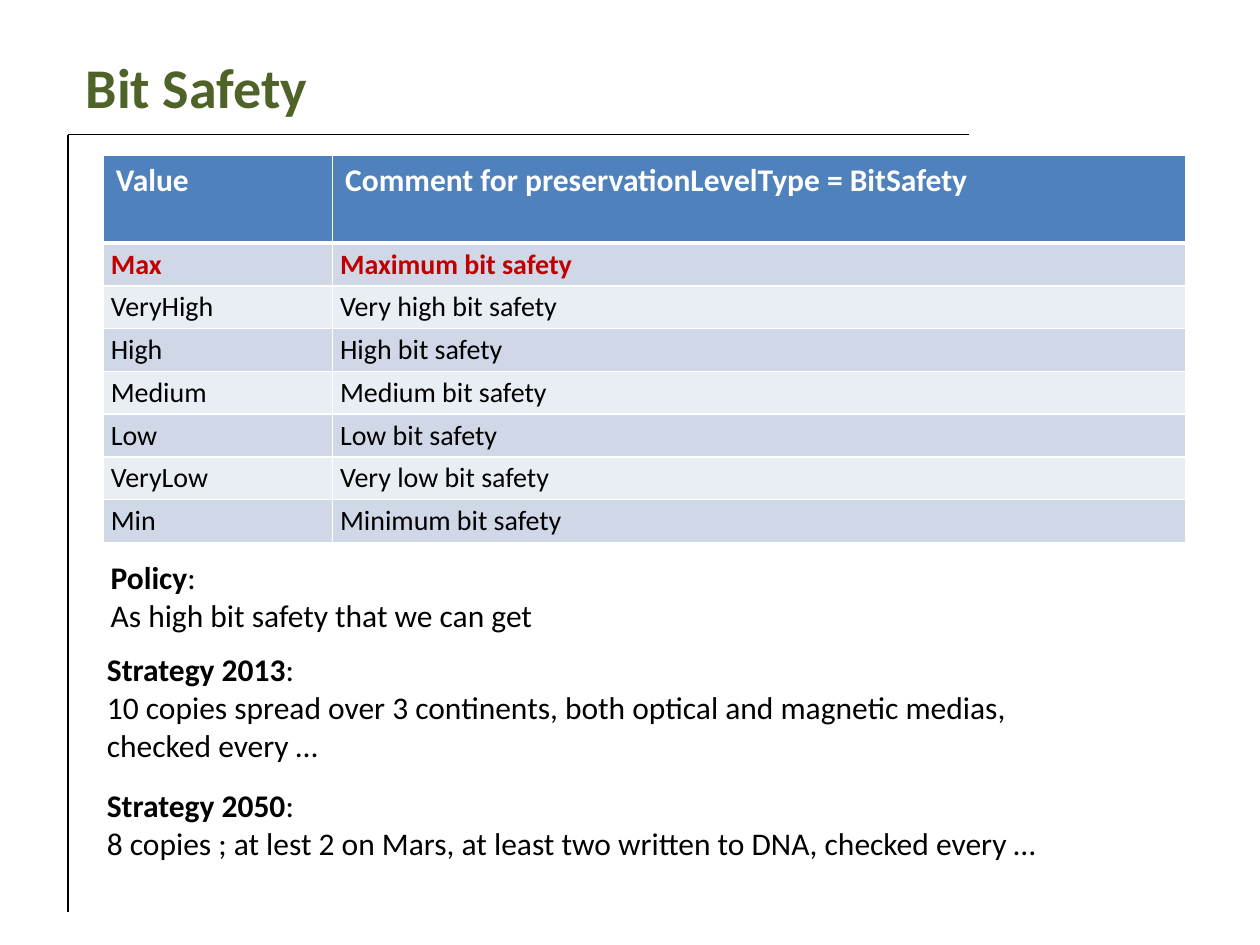
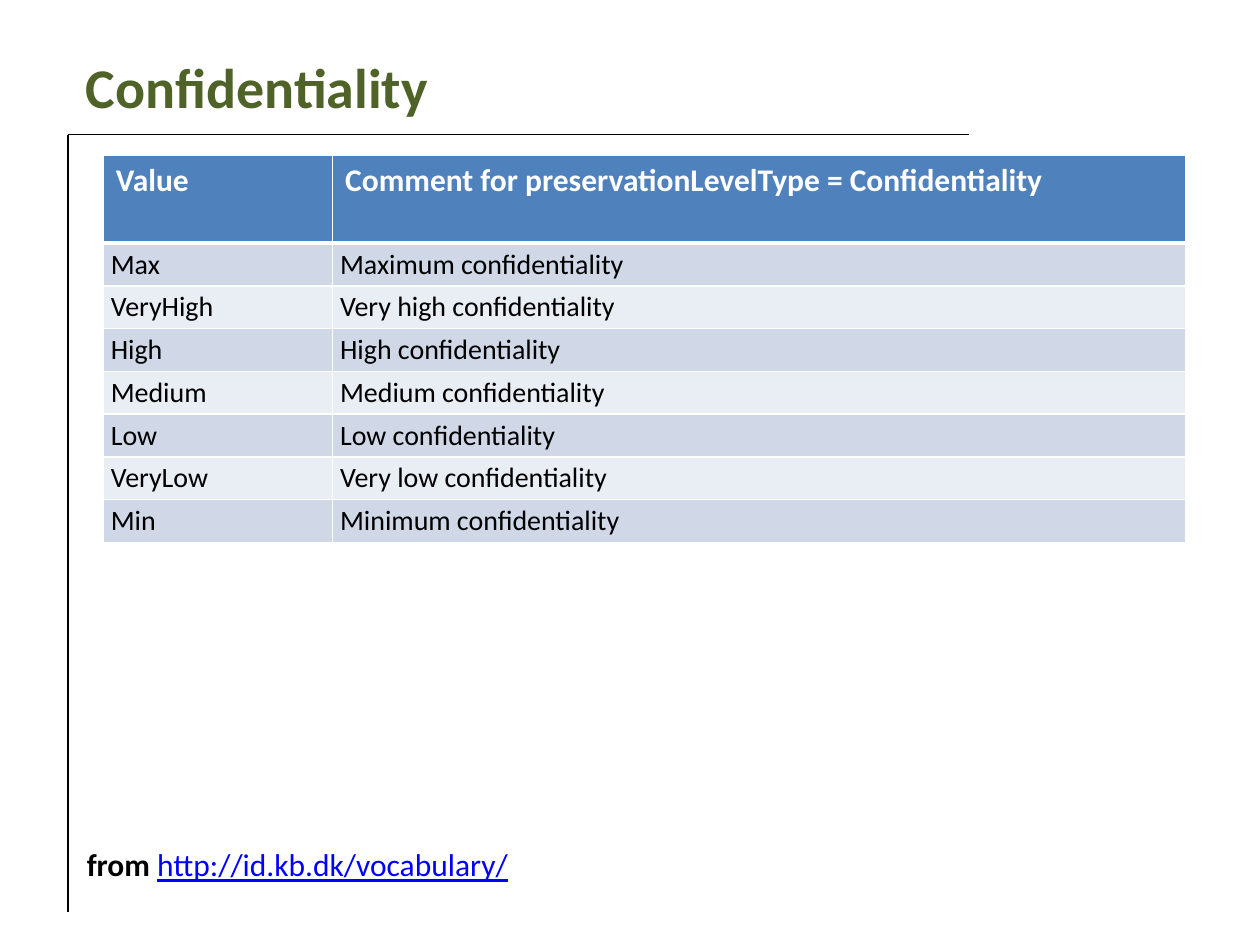
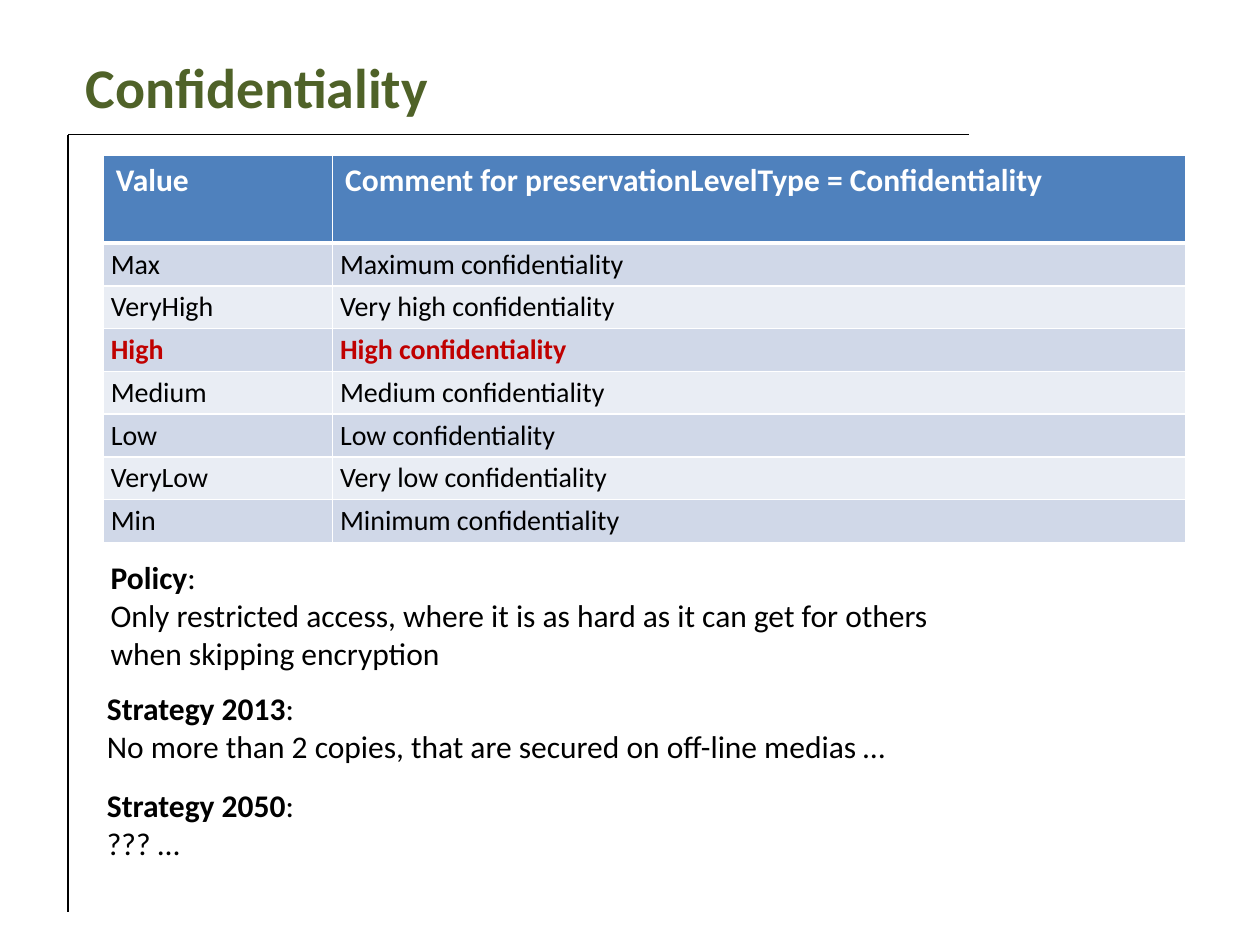
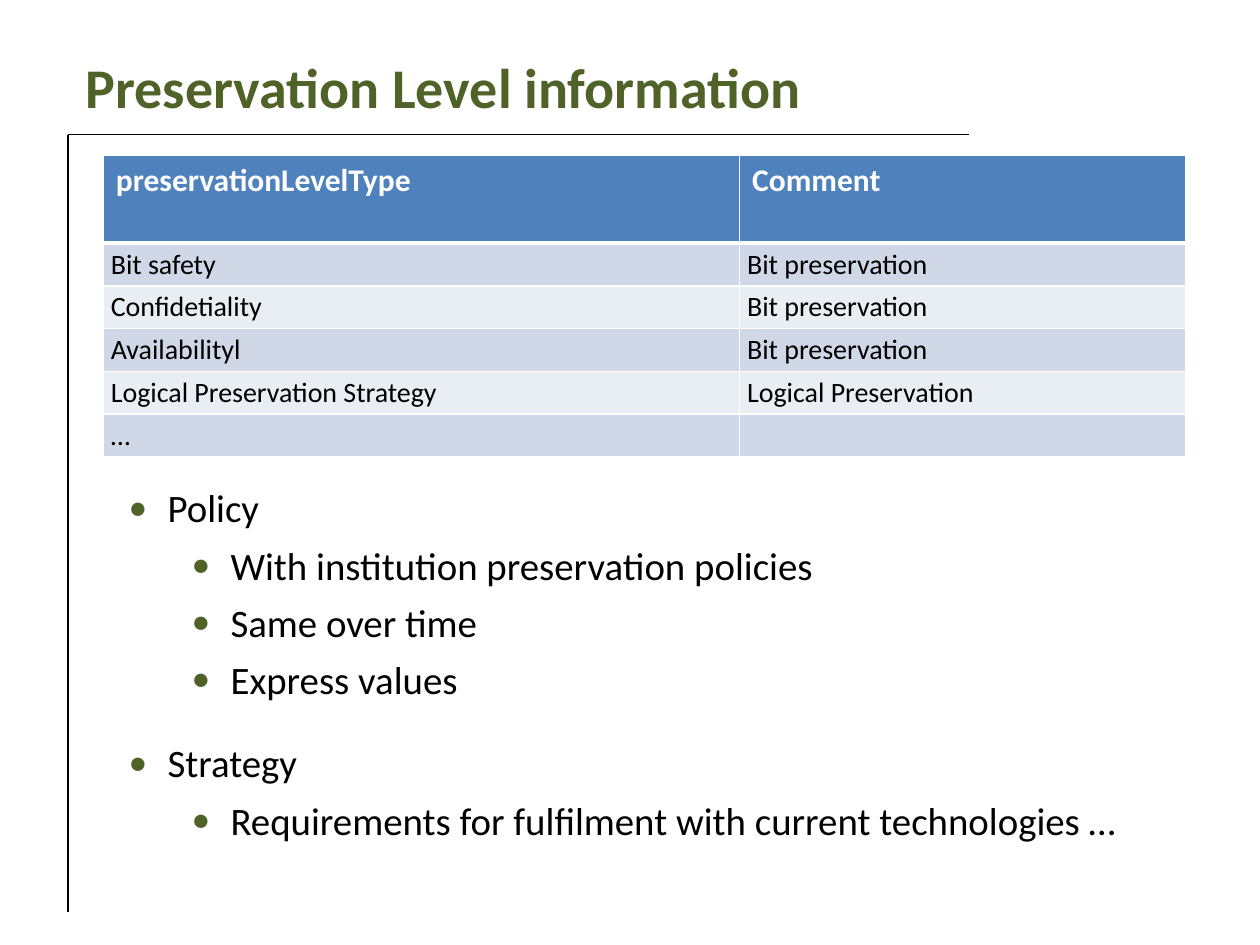
from dataclasses import dataclass
from typing import NamedTuple

from lxml import etree
from pptx import Presentation
from pptx.dml.color import RGBColor
from pptx.enum.shapes import MSO_CONNECTOR
from pptx.enum.text import MSO_ANCHOR, MSO_AUTO_SIZE, PP_ALIGN
from pptx.oxml.ns import qn
from pptx.util import Inches, Pt

LEFT = PP_ALIGN.LEFT
TOP = MSO_ANCHOR.TOP
MIDDLE = MSO_ANCHOR.MIDDLE
NO_FIT = MSO_AUTO_SIZE.NONE
STRAIGHT = MSO_CONNECTOR.STRAIGHT

WIDTH, HEIGHT = Inches(10), Inches(7.5)
CONTENT_LAYOUT, TITLE_LAYOUT = 1, 5
COLORS = {
    "title": "4F6228",
    "text": "000000",
    "paper": "FFFFFF",
    "header": "4F81BD",
    "odd": "D0D8E8",
    "even": "E9EDF4",
    "accent": "C00000",
    "link": "0000FF",
}

TITLE_FONT = {"size": Pt(32), "bold": True}
HEADER_FONT = {"size": Pt(18), "bold": True}
CELL_FONT = {"size": Pt(16), "bold": False}
ACCENT_FONT = {"size": Pt(16), "bold": True}
LABEL_FONT = {"size": Pt(18), "bold": True}
NOTE_FONT = {"size": Pt(18), "bold": False}
LINK_FONT = {"size": Pt(18), "bold": False, "underline": True}
LIST_FONT = {"size": Pt(22.2), "bold": False}

CELL_MARGINS = {
    "margin_left": Inches(0.06),
    "margin_right": Inches(0.06),
    "margin_top": Inches(0.03),
    "margin_bottom": Inches(0.03),
    "vertical_anchor": MIDDLE,
}
HEADER_ROW, BODY_ROW = 9.33, 4.53


class Area(NamedTuple):
    """Percent of the slide's width and height."""
    left: float
    top: float
    width: float
    height: float


@dataclass
class Note:
    label: str
    text: str
    area: Area


@dataclass
class Grid:
    header: tuple[str, str]
    rows: list[tuple[str, str]]
    columns: tuple[float, float]
    accent: str = ""


class Item(NamedTuple):
    text: str
    level: int
    after: int = 0


TITLE_AREA = Area(5.8, 4, 82, 10.27)
RULES = [Area(5.4, 14.27, 71.5, 0), Area(5.4, 14.27, 0, 82.26)]
TABLE_LEFT, TABLE_TOP = 8.2, 16.4
LIST_AREA = Area(8.3, 51.07, 82, 42)
SOURCE_AREA = Area(5.9, 88.8, 36.9, 5.33)

LEVELS = [
    ("Max", "Maximum"),
    ("VeryHigh", "Very high"),
    ("High", "High"),
    ("Medium", "Medium"),
    ("Low", "Low"),
    ("VeryLow", "Very low"),
    ("Min", "Minimum"),
]
BIT_NOTES = [
    Note("Strategy 2050",
         "8 copies ; at lest 2 on Mars, at least two written to DNA, checked every …",
         Area(7.5, 82.53, 86.7, 13.47)),
    Note("Strategy 2013",
         "10 copies spread over 3 continents, both optical and magnetic medias, \nchecked every …",
         Area(7.5, 68.13, 81.5, 17.47)),
    Note("Policy", "As high bit safety that we can get", Area(7.8, 58.4, 39, 9.47)),
]
CONFIDENTIALITY_NOTES = [
    Note("Strategy 2050", "??? …", Area(7.5, 82.53, 19.8, 13.47)),
    Note("Strategy 2013", "No more than 2 copies, that are secured on off-line medias …",
         Area(7.5, 72.27, 70.8, 13.47)),
    Note("Policy",
         "Only restricted access, where it is as hard as it can get for others \nwhen skipping encryption",
         Area(7.8, 58.4, 75.8, 13.47)),
]
TYPES = Grid(
    ("preservationLevelType", "Comment"),
    [
        ("Bit safety", "Bit preservation"),
        ("Confidetiality", "Bit preservation"),
        ("Availabilityl", "Bit preservation"),
        ("Logical Preservation Strategy", "Logical Preservation"),
        ("…", ""),
    ],
    (50.5, 35.4),
)
POINTS = [
    Item("Policy", 0),
    Item("With institution preservation policies", 1),
    Item("Same over time", 1),
    Item("Express values", 1, 18),
    Item("Strategy", 0),
    Item("Requirements for fulfilment with current technologies …", 1),
]


def across(percent: float) -> int:
    return round(WIDTH * percent / 100)


def down(percent: float) -> int:
    return round(HEIGHT * percent / 100)


def emu(area: Area) -> tuple[int, int, int, int]:
    return across(area.left), down(area.top), across(area.width), down(area.height)


def rgb(name: str) -> RGBColor:
    return RGBColor.from_string(COLORS[name])


def assign(target, values: dict) -> None:
    for name, value in values.items():
        setattr(target, name, value)


def add_run(p, text: str, fmt: dict, color: str = "text") -> None:
    r = p.add_run()
    r.text = text
    r.font.name = "Calibri"
    r.font.color.rgb = rgb(color)
    assign(r.font, fmt)


def place(sp, area: Area) -> None:
    assign(sp, dict(zip(("left", "top", "width", "height"), emu(area))))


def add_rules(prs, s) -> None:
    tree = prs.slide_master.shapes.element
    for number, rule in enumerate(RULES):
        left, top, width, height = emu(rule)
        line = s.shapes.add_connector(STRAIGHT, left, top, left + width, top + height)
        line.line.color.rgb = rgb("text")
        line.line.width = Pt(0.75)
        etree.SubElement(line.element.spPr, qn("a:effectLst"))
        line.element.nvCxnSpPr.cNvPr.set("id", str(100 + number))
        tree.append(line.element)


def add_slide(prs, title: str, layout: int = TITLE_LAYOUT):
    s = prs.slides.add_slide(prs.slide_layouts[layout])
    sp = s.shapes.title
    place(sp, TITLE_AREA)
    tf = sp.text_frame
    assign(tf, {"auto_size": NO_FIT, "vertical_anchor": MIDDLE, "word_wrap": True})
    tf.paragraphs[0].alignment = LEFT
    add_run(tf.paragraphs[0], title, TITLE_FONT, "title")
    return s


def add_borders(cell, top: float, bottom: float) -> None:
    tc_pr = cell._tc.get_or_add_tcPr()
    for side, points in (("L", 1), ("R", 1), ("T", top), ("B", bottom)):
        line = etree.SubElement(tc_pr, qn(f"a:ln{side}"), w=str(Pt(points)))
        fill = etree.SubElement(line, qn("a:solidFill"))
        etree.SubElement(fill, qn("a:srgbClr"), val=COLORS["paper"])


def fill_cell(cell, text: str, row: int, accent: bool) -> None:
    add_borders(cell, 3 if row == 1 else 1, 3 if row == 0 else 1)
    cell.fill.solid()
    p = cell.text_frame.paragraphs[0]
    if row == 0:
        cell.fill.fore_color.rgb = rgb("header")
        add_run(p, text, HEADER_FONT, "paper")
        return
    cell.fill.fore_color.rgb = rgb("odd" if row % 2 else "even")
    assign(cell, CELL_MARGINS)
    if not text:
        etree.SubElement(p._p, qn("a:endParaRPr"), sz="1600")
    elif accent:
        add_run(p, text, ACCENT_FONT, "accent")
    else:
        add_run(p, text, CELL_FONT)


def add_grid(s, grid: Grid) -> None:
    rows = [grid.header, *grid.rows]
    heights = [HEADER_ROW] + [BODY_ROW] * len(grid.rows)
    area = Area(TABLE_LEFT, TABLE_TOP, sum(grid.columns), sum(heights))
    table = s.shapes.add_table(len(rows), len(grid.columns), *emu(area)).table
    for column, width in zip(table.columns, grid.columns):
        column.width = across(width)
    for i, (texts, height) in enumerate(zip(rows, heights)):
        table.rows[i].height = down(height)
        for j, text in enumerate(texts):
            fill_cell(table.cell(i, j), text, i, texts[0] == grid.accent)


def level_grid(kind: str, subject: str, accent: str = "") -> Grid:
    rows = [(value, f"{degree} {subject}") for value, degree in LEVELS]
    header = ("Value", f"Comment for preservationLevelType = {kind}")
    return Grid(header, rows, (18.2, 67.7), accent)


def add_text_box(s, area: Area):
    tf = s.shapes.add_textbox(*emu(area)).text_frame
    tf.word_wrap = True
    return tf


def add_note(s, note: Note) -> None:
    tf = add_text_box(s, note.area)
    p = tf.paragraphs[0]
    add_run(p, note.label, LABEL_FONT)
    add_run(p, ":", NOTE_FONT)
    p = tf.add_paragraph()
    for i, line in enumerate(note.text.split("\n")):
        if i:
            p.add_line_break()
        add_run(p, line, NOTE_FONT)


def add_source(s) -> None:
    p = add_text_box(s, SOURCE_AREA).paragraphs[0]
    add_run(p, "from ", LABEL_FONT)
    add_run(p, "http://id.kb.dk/vocabulary/", LINK_FONT, "link")


def add_bullet(p, level: int) -> None:
    p_pr = p._p.get_or_add_pPr()
    p_pr.set("marL", str(Inches(0.4 + 0.5 * level)))
    p_pr.set("indent", str(Inches(-0.31)))
    color = etree.SubElement(p_pr, qn("a:buClr"))
    etree.SubElement(color, qn("a:srgbClr"), val=COLORS["title"])
    etree.SubElement(p_pr, qn("a:buSzPct"), val="80000")
    etree.SubElement(p_pr, qn("a:buChar"), char="●")
    tabs = etree.SubElement(p_pr, qn("a:tabLst"))
    etree.SubElement(tabs, qn("a:tab"), pos=str(Inches(0.59)), algn="l")


def add_list(s, items: list[Item]) -> None:
    sp = s.placeholders[1]
    place(sp, LIST_AREA)
    tf = sp.text_frame
    assign(tf, {"auto_size": NO_FIT, "vertical_anchor": TOP, "word_wrap": True})
    for i, item in enumerate(items):
        p = tf.add_paragraph() if i else tf.paragraphs[0]
        add_bullet(p, item.level)
        assign(p, {
            "level": item.level,
            "line_spacing": 1.0 if item.level else 0.9,
            "space_before": Pt(6 if i else 0),
            "space_after": Pt(item.after),
        })
        add_run(p, item.text, LIST_FONT)


def main() -> None:
    prs = Presentation()
    prs.slide_width, prs.slide_height = WIDTH, HEIGHT
    background = prs.slide_master.background.fill
    background.solid()
    background.fore_color.rgb = rgb("paper")

    s = add_slide(prs, "Bit Safety")
    add_rules(prs, s)
    add_grid(s, level_grid("BitSafety", "bit safety", "Max"))
    for note in BIT_NOTES:
        add_note(s, note)

    s = add_slide(prs, "Confidentiality")
    add_grid(s, level_grid("Confidentiality", "confidentiality"))
    add_source(s)

    s = add_slide(prs, "Confidentiality")
    add_grid(s, level_grid("Confidentiality", "confidentiality", "High"))
    for note in CONFIDENTIALITY_NOTES:
        add_note(s, note)

    s = add_slide(prs, "Preservation Level information", CONTENT_LAYOUT)
    add_grid(s, TYPES)
    add_list(s, POINTS)

    prs.save("out.pptx")


if __name__ == "__main__":
    main()
